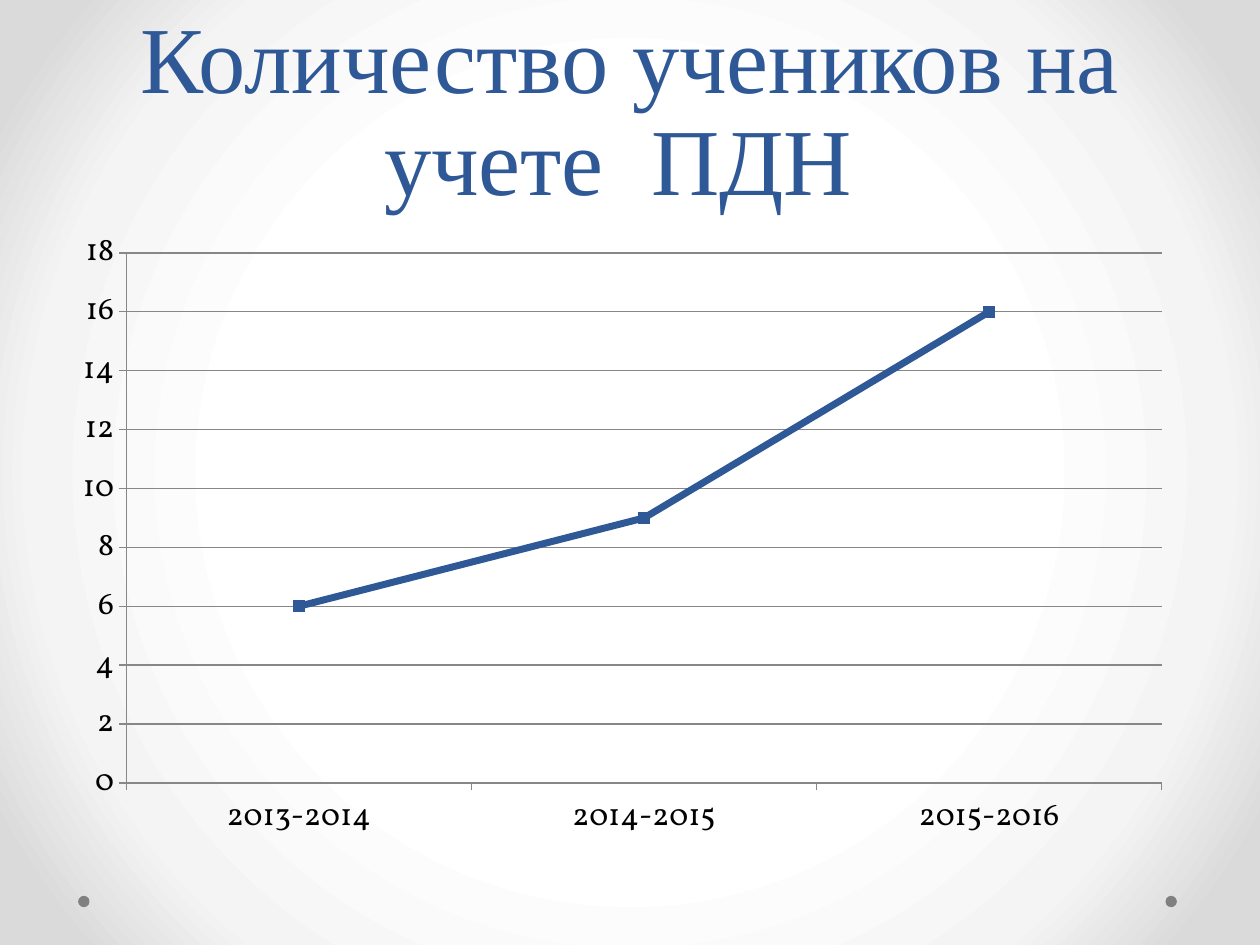
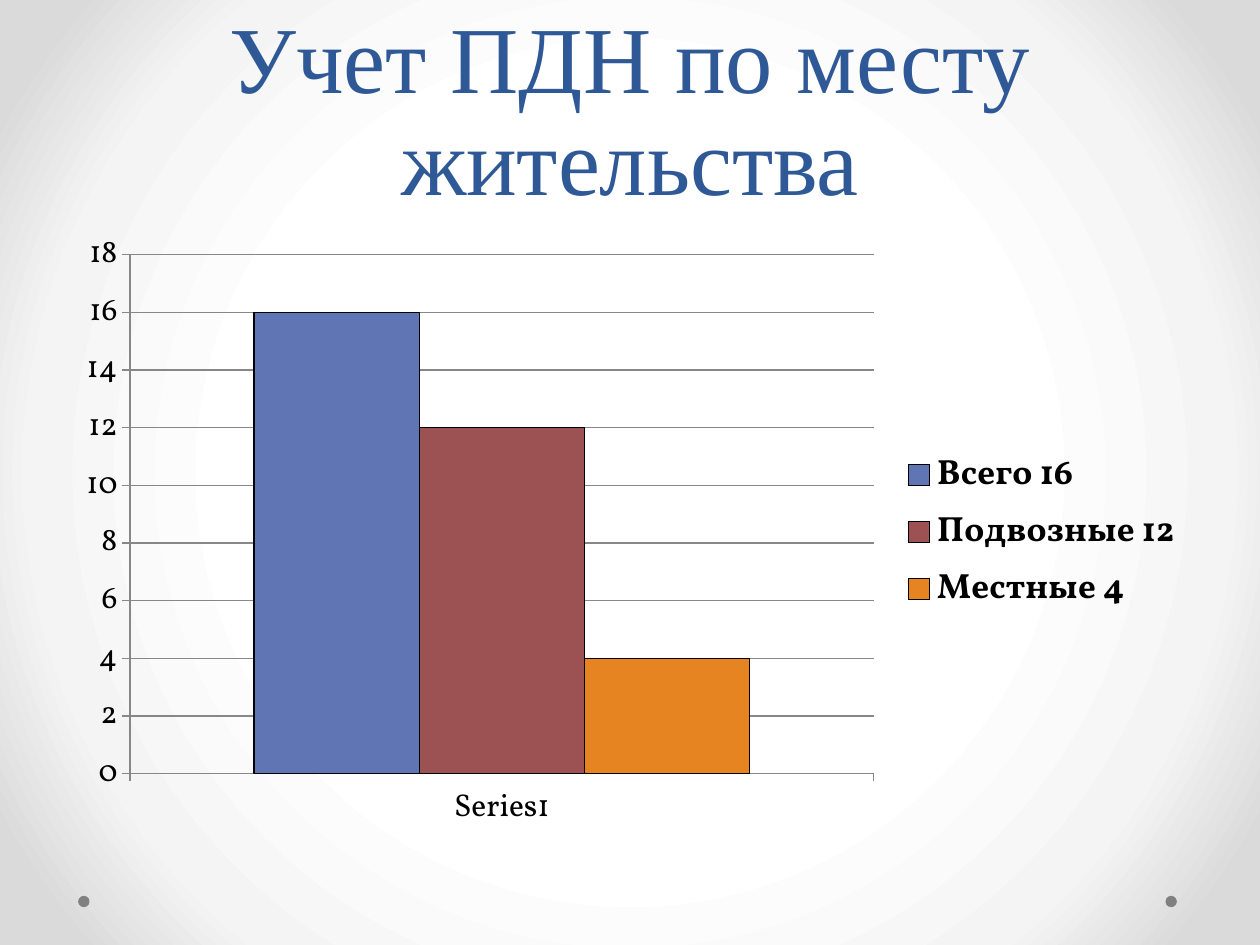
from dataclasses import dataclass

from pptx import Presentation
from pptx.chart.chart import Chart
from pptx.chart.data import CategoryChartData
from pptx.dml.color import RGBColor
from pptx.enum.chart import XL_CHART_TYPE, XL_LEGEND_POSITION, XL_MARKER_STYLE, XL_TICK_MARK
from pptx.enum.shapes import MSO_SHAPE
from pptx.enum.text import MSO_ANCHOR, PP_ALIGN
from pptx.oxml import parse_xml
from pptx.oxml.ns import nsdecls
from pptx.slide import Slide
from pptx.util import Emu, Pt

EMU_PER_PX = 9144  # 100 px to the inch

BLUE = RGBColor(0x2F, 0x58, 0x97)
BLACK = RGBColor(0x00, 0x00, 0x00)
DOT_GRAY = RGBColor(0x80, 0x80, 0x80)
GRID_GRAY = RGBColor(0x87, 0x87, 0x87)
PERIWINKLE = RGBColor(0x60, 0x76, 0xB4)
BRICK = RGBColor(0x9C, 0x52, 0x52)
ORANGE = RGBColor(0xE6, 0x84, 0x22)
BACKGROUND_STOPS = (
    (50, RGBColor(0xFF, 0xFF, 0xFF)),
    (76, RGBColor(0xF4, 0xF4, 0xF4)),
    (92, RGBColor(0xDA, 0xDA, 0xDA)),
)

TITLE_FONT = "Times New Roman"
CHART_FONT = "Vollkorn"


@dataclass(frozen=True)
class Box:
    left: int
    top: int
    width: int
    height: int

    def emu(self) -> tuple[Emu, ...]:
        sides = (self.left, self.top, self.width, self.height)
        return tuple(Emu(side * EMU_PER_PX) for side in sides)


@dataclass(frozen=True)
class Series:
    name: str
    values: tuple[int, ...]
    color: RGBColor


@dataclass(frozen=True)
class PlotArea:
    """Inner plot area as fractions of the chart frame."""

    x: float
    y: float
    w: float
    h: float


@dataclass(frozen=True)
class ChartSlide:
    title: str
    chart_type: XL_CHART_TYPE
    categories: tuple[str, ...]
    series: tuple[Series, ...]
    plot_area: PlotArea


TITLE_BOX = Box(50, 0, 900, 175)
CHART_BOX = Box(50, 175, 900, 495)
FOOTER_DOTS = (Box(925, 711, 9, 9), Box(62, 711, 9, 9))

CHART_SLIDES = (
    ChartSlide(
        "Количество учеников на учете  ПДН ",
        XL_CHART_TYPE.LINE_MARKERS,
        ("2013-2014", "2014-2015", "2015-2016"),
        (Series("Series 1", (6, 9, 16), BLUE),),
        PlotArea(0.056, 0.052, 0.913, 0.85),
    ),
    ChartSlide(
        "Учет ПДН по месту жительства",
        XL_CHART_TYPE.COLUMN_CLUSTERED,
        ("Series1",),
        (
            Series("Всего 16", (16,), PERIWINKLE),
            Series("Подвозные 12", (12,), BRICK),
            Series("Местные 4", (4,), ORANGE),
        ),
        PlotArea(0.059, 0.055, 0.656, 0.832),
    ),
)


def paint_background(slide: Slide) -> None:
    """Fill the slide with a gradient that darkens from its centre."""
    slide.background.fill.gradient()
    stops = "".join(
        f'<a:gs pos="{percent * 1000}"><a:srgbClr val="{color}"/></a:gs>'
        for percent, color in BACKGROUND_STOPS
    )
    radial = parse_xml(
        f'<a:gradFill {nsdecls("a")} rotWithShape="1"><a:gsLst>{stops}</a:gsLst>'
        '<a:path path="circle"><a:fillToRect l="50000" t="50000" r="50000" b="50000"/>'
        "</a:path></a:gradFill>"
    )
    linear = slide.element.xpath(".//p:bgPr/a:gradFill")[0]
    linear.getparent().replace(linear, radial)


def add_footer_dots(slide: Slide) -> None:
    for box in FOOTER_DOTS:
        dot = slide.shapes.add_shape(MSO_SHAPE.OVAL, *box.emu())
        dot.shadow.inherit = False
        dot.fill.solid()
        dot.fill.fore_color.rgb = DOT_GRAY
        dot.line.fill.background()


def add_title(slide: Slide, text: str) -> None:
    frame = slide.shapes.add_textbox(*TITLE_BOX.emu()).text_frame
    frame.word_wrap = True
    frame.vertical_anchor = MSO_ANCHOR.BOTTOM
    paragraph = frame.paragraphs[0]
    paragraph.alignment = PP_ALIGN.CENTER
    paragraph.line_spacing = Pt(58)
    run = paragraph.add_run()
    run.text = text
    run.font.name = TITLE_FONT
    run.font.size = Pt(54)
    run.font.color.rgb = BLUE


def place_plot_area(chart: Chart, area: PlotArea) -> None:
    plot_area = chart.element.xpath(".//c:plotArea")[0]
    for layout in plot_area.xpath("./c:layout"):
        plot_area.remove(layout)
    sides = "".join(
        f'<c:{side} val="{value}"/>'
        for side, value in (("x", area.x), ("y", area.y), ("w", area.w), ("h", area.h))
    )
    plot_area.insert(0, parse_xml(
        f'<c:layout {nsdecls("c")}><c:manualLayout><c:layoutTarget val="inner"/>'
        f'<c:xMode val="edge"/><c:yMode val="edge"/>{sides}</c:manualLayout></c:layout>'
    ))


def style_axes(chart: Chart) -> None:
    for axis in (chart.category_axis, chart.value_axis):
        axis.major_tick_mark = XL_TICK_MARK.OUTSIDE
        axis.minor_tick_mark = XL_TICK_MARK.NONE
        axis.format.line.color.rgb = GRID_GRAY
        axis.format.line.width = Pt(0.75)
    chart.category_axis.has_major_gridlines = False
    value_axis = chart.value_axis
    value_axis.minimum_scale = 0
    value_axis.maximum_scale = 18
    value_axis.major_unit = 2
    value_axis.has_major_gridlines = True
    value_axis.major_gridlines.format.line.color.rgb = GRID_GRAY
    value_axis.major_gridlines.format.line.width = Pt(0.75)


def style_lines(chart: Chart, series: tuple[Series, ...]) -> None:
    for line, item in zip(chart.plots[0].series, series):
        line.smooth = False
        line.format.line.color.rgb = item.color
        line.format.line.width = Pt(4)
        line.marker.style = XL_MARKER_STYLE.SQUARE
        line.marker.size = 6
        line.marker.format.fill.solid()
        line.marker.format.fill.fore_color.rgb = item.color
        line.marker.format.line.color.rgb = item.color


def style_columns(chart: Chart, series: tuple[Series, ...]) -> None:
    chart.plots[0].gap_width = 150
    for column, item in zip(chart.plots[0].series, series):
        column.format.fill.solid()
        column.format.fill.fore_color.rgb = item.color
        column.format.line.color.rgb = BLACK
        column.format.line.width = Pt(0.75)


def add_legend(chart: Chart) -> None:
    chart.has_legend = True
    legend = chart.legend
    legend.position = XL_LEGEND_POSITION.RIGHT
    legend.include_in_layout = False
    legend.font.name = CHART_FONT
    legend.font.size = Pt(20)
    legend.font.bold = True
    legend.font.color.rgb = BLACK


def add_chart(slide: Slide, content: ChartSlide) -> None:
    data = CategoryChartData()
    data.categories = content.categories
    for item in content.series:
        data.add_series(item.name, item.values)
    chart = slide.shapes.add_chart(content.chart_type, *CHART_BOX.emu(), data).chart
    chart.has_title = False
    chart.has_legend = False
    chart.font.name = CHART_FONT
    chart.font.size = Pt(18)
    chart.font.color.rgb = BLACK
    chart.plots[0].vary_by_categories = False
    style_axes(chart)
    place_plot_area(chart, content.plot_area)
    if content.chart_type == XL_CHART_TYPE.LINE_MARKERS:
        style_lines(chart, content.series)
    else:
        style_columns(chart, content.series)
        add_legend(chart)


def main() -> None:
    presentation = Presentation()
    presentation.slide_width = Emu(1000 * EMU_PER_PX)
    presentation.slide_height = Emu(750 * EMU_PER_PX)
    blank_layout = presentation.slide_layouts[6]
    for content in CHART_SLIDES:
        slide = presentation.slides.add_slide(blank_layout)
        paint_background(slide)
        add_footer_dots(slide)
        add_title(slide, content.title)
        add_chart(slide, content)
    presentation.save("out.pptx")


if __name__ == "__main__":
    main()
